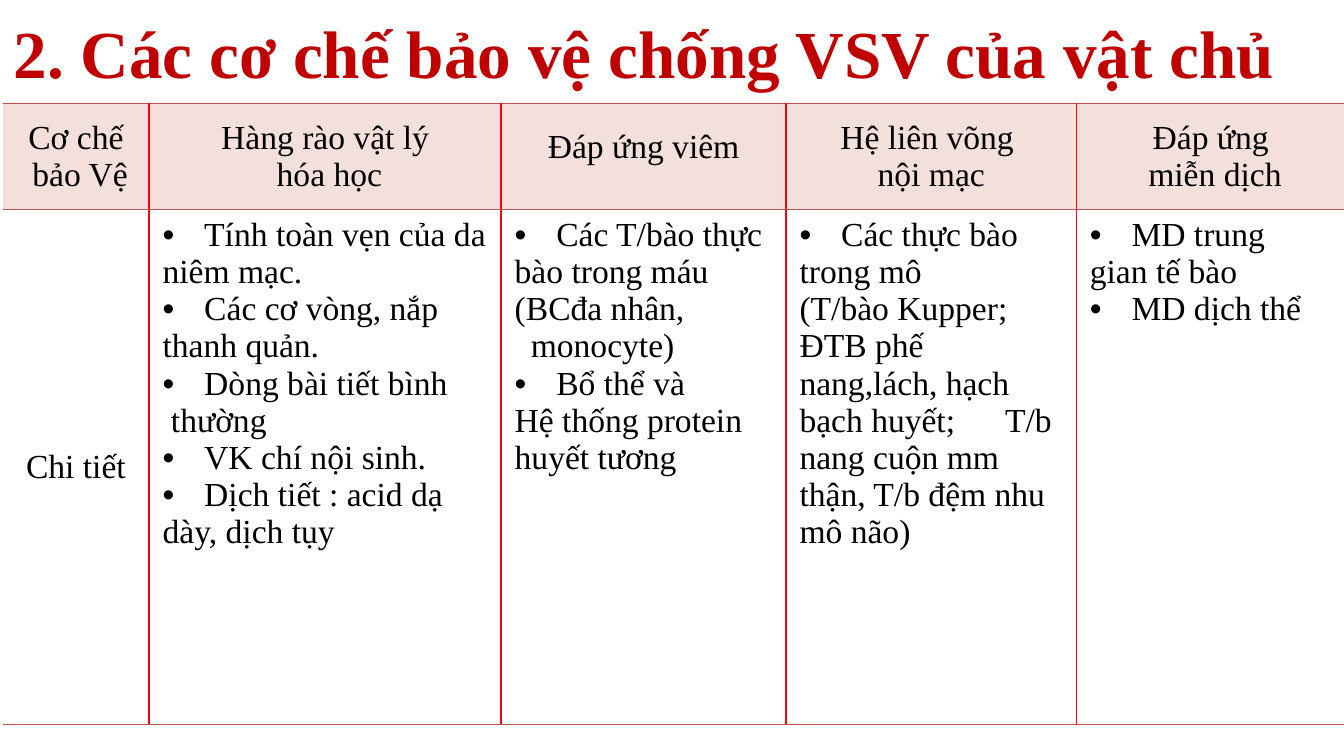
from lxml import etree
from pptx import Presentation
from pptx import util as u
from pptx.dml.color import RGBColor
from pptx.enum import text
from pptx.oxml import ns

TITLE_RED = RGBColor(0xC0, 0x00, 0x00)
LINE_RED = RGBColor(0xFF, 0x00, 0x00)
RULE_RED = RGBColor(0xC0, 0x50, 0x4D)
HEADER_FILL = RGBColor(0xF4, 0xE0, 0xDA)
WHITE = RGBColor(0xFF, 0xFF, 0xFF)
BLACK = RGBColor(0x00, 0x00, 0x00)
FONT = "Times New Roman"

MIDDLE = text.MSO_ANCHOR.MIDDLE
CENTER = text.PP_ALIGN.CENTER
BULLET_INDENT = u.Inches(0.31)
TAB_STOP = u.Inches(1.53)

COLUMN_WIDTHS = [1.09, 2.62, 2.12, 2.16, 2]
ROW_HEIGHTS = [0.79, 3.83]
HEADERS = [
    ["Cơ chế", " bảo Vệ"],
    ["Hàng rào vật lý", " hóa học"],
    ["Đáp ứng viêm"],
    ["Hệ liên võng ", "nội mạc"],
    ["Đáp ứng", " miễn dịch"],
]
# A leading "•" marks a bulleted line; a pair is a line and its indent in inches.
DETAILS = [
    ["Chi tiết"],
    ["•Tính toàn vẹn của da", "niêm mạc.", "•Các cơ vòng, nắp", "thanh quản.",
     "•Dòng bài tiết bình", " thường", "•VK chí nội sinh.",
     "•Dịch tiết : acid dạ", "dày, dịch tụy"],
    ["•Các T/bào thực", "bào trong máu (BCđa nhân,", ("monocyte)", 0.12),
     "•Bổ thể và", "Hệ thống protein huyết tương"],
    ["•Các thực bào", "trong mô",
     "(T/bào Kupper; ĐTB phế nang,lách, hạch bạch huyết;\tT/b nang cuộn mm "
     "thận, T/b đệm nhu mô não)"],
    ["•MD trung", "gian tế bào", "•MD dịch thể"],
]


def add_element(parent, tag, **attributes):
    values = {name: str(value) for name, value in attributes.items()}
    return etree.SubElement(parent, ns.qn(tag), values)


class SlideBuilder:
    def __init__(self, presentation):
        self.slide = presentation.slides.add_slide(presentation.slide_layouts[5])

    def style(self, paragraph, size, color, bold=False):
        font = paragraph.font
        font.name, font.size, font.bold = FONT, u.Pt(size), bold
        font.color.rgb = color

    def title(self, wording, left, top, width, height):
        shape = self.slide.shapes.title
        shape.left, shape.top = u.Inches(left), u.Inches(top)
        shape.width, shape.height = u.Inches(width), u.Inches(height)
        frame = shape.text_frame
        frame.text = wording
        frame.auto_size = text.MSO_AUTO_SIZE.NONE
        frame.vertical_anchor = MIDDLE
        paragraph = frame.paragraphs[0]
        paragraph.alignment = text.PP_ALIGN.LEFT
        self.style(paragraph, 36, TITLE_RED, bold=True)

    def table(self, left, top, widths, heights):
        frame = self.slide.shapes.add_table(
            len(heights), len(widths), u.Inches(left), u.Inches(top),
            u.Inches(sum(widths)), u.Inches(sum(heights)))
        table = frame.table
        table.first_row = table.horz_banding = False
        for column, width in zip(table.columns, widths):
            column.width = u.Inches(width)
        for row, height in zip(table.rows, heights):
            row.height = u.Inches(height)
        return table

    def borders(self, cell, left, right):
        """Rule the top and bottom, and the sides that have a colour."""
        properties = cell._tc.get_or_add_tcPr()
        edges = {"L": left, "R": right, "T": RULE_RED, "B": RULE_RED}
        for edge, color in edges.items():
            line = add_element(properties, f"a:ln{edge}", w=u.Pt(1))
            if color is None:
                add_element(line, "a:noFill")
            else:
                fill = add_element(line, "a:solidFill")
                add_element(fill, "a:srgbClr", val=color)

    def fill(self, cell, color, opacity=100):
        cell.fill.solid()
        cell.fill.fore_color.rgb = color
        if opacity < 100:
            color_element = cell._tc.tcPr.find(ns.qn("a:solidFill"))[0]
            add_element(color_element, "a:alpha", val=opacity * 1000)

    def lines(self, cell, lines, alignment=None):
        frame = cell.text_frame
        for index, line in enumerate(lines):
            wording, indent = line if isinstance(line, tuple) else (line, 0)
            paragraph = frame.add_paragraph() if index else frame.paragraphs[0]
            paragraph.text = wording.lstrip("•")
            paragraph.alignment = alignment
            properties = paragraph._p.get_or_add_pPr()
            if wording.startswith("•"):
                properties.set("marL", str(BULLET_INDENT))
                properties.set("indent", str(-BULLET_INDENT))
                add_element(properties, "a:buFont", typeface="Arial")
                add_element(properties, "a:buChar", char="•")
            elif indent:
                properties.set("marL", str(u.Inches(indent)))
            if "\t" in wording:
                tabs = add_element(properties, "a:tabLst")
                add_element(tabs, "a:tab", pos=TAB_STOP, algn="l")
            self.style(paragraph, 18, BLACK)


def main():
    presentation = Presentation()
    presentation.slide_width = u.Inches(10)
    presentation.slide_height = u.Inches(10 * 9 / 16)
    builder = SlideBuilder(presentation)
    builder.title("2. Các cơ chế bảo vệ chống VSV của vật chủ", 0, 0, 10.01, 0.77)

    table = builder.table(0.02, 0.77, COLUMN_WIDTHS, ROW_HEIGHTS)
    last = len(COLUMN_WIDTHS) - 1
    for column, (header, details) in enumerate(zip(HEADERS, DETAILS)):
        header_cell, detail_cell = table.cell(0, column), table.cell(1, column)
        for cell in (header_cell, detail_cell):
            builder.borders(cell, LINE_RED if column > 0 else None,
                            LINE_RED if column < last else None)
        builder.fill(header_cell, HEADER_FILL)
        builder.fill(detail_cell, WHITE, opacity=20)
        header_cell.vertical_anchor = MIDDLE
        builder.lines(header_cell, header, CENTER)
        builder.lines(detail_cell, details, None if column else CENTER)
    table.cell(1, 0).vertical_anchor = MIDDLE

    inflammation_header = table.cell(0, 2)
    inflammation_header.vertical_anchor = text.MSO_ANCHOR.BOTTOM
    inflammation_header.margin_bottom = u.Inches(0.33)

    presentation.save("out.pptx")


if __name__ == "__main__":
    main()
